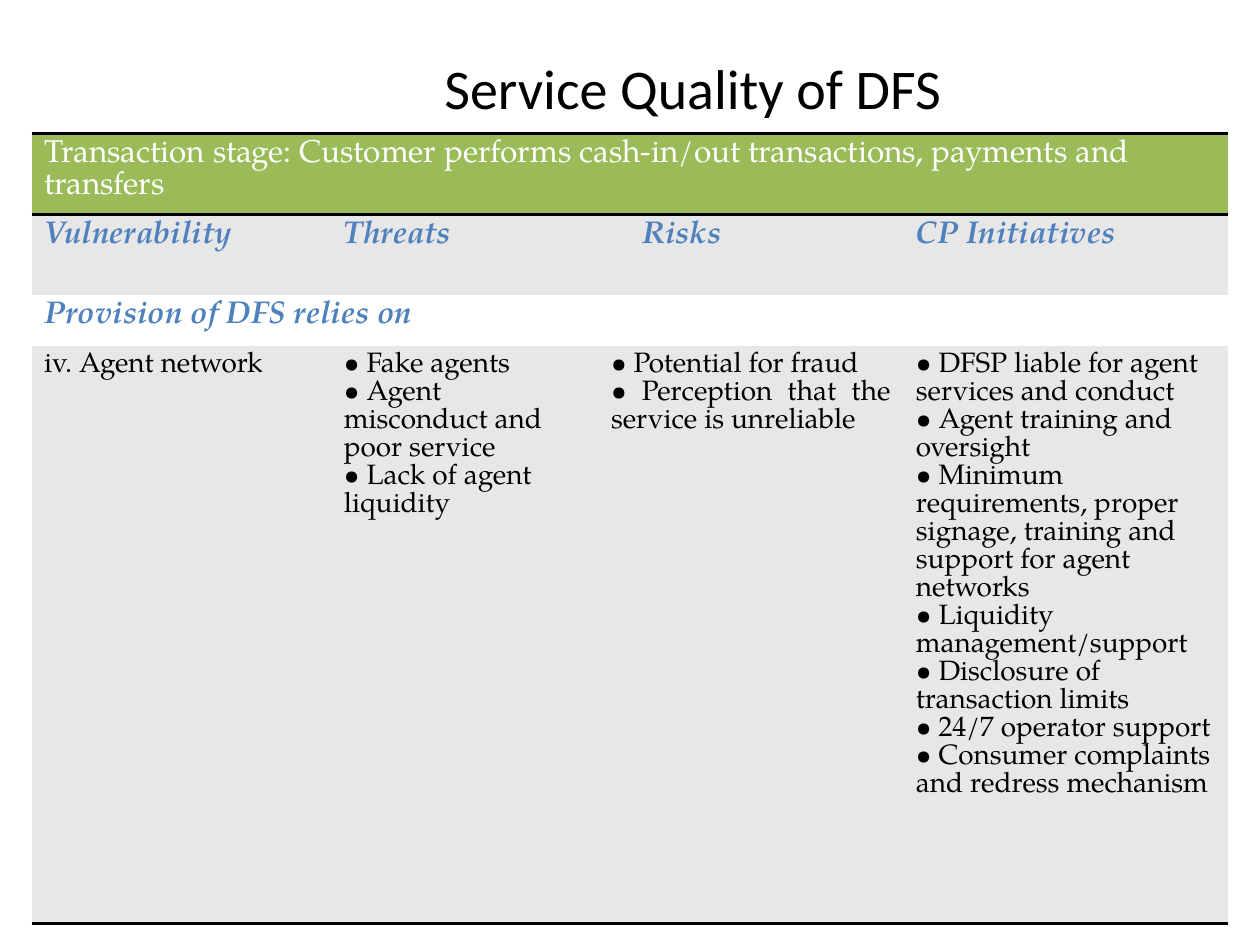
from lxml import etree
from pptx import Presentation
from pptx.dml.color import RGBColor
from pptx.enum.text import MSO_ANCHOR, PP_ALIGN
from pptx.oxml.ns import qn
from pptx.util import Inches, Pt

CENTER, JUSTIFY, LEFT = PP_ALIGN.CENTER, PP_ALIGN.JUSTIFY, PP_ALIGN.LEFT
MIDDLE = MSO_ANCHOR.MIDDLE

BLACK = RGBColor(0x00, 0x00, 0x00)
WHITE = RGBColor(0xFF, 0xFF, 0xFF)
GREEN = RGBColor(0x9B, 0xBB, 0x59)
GREY = RGBColor(0xE7, 0xE7, 0xE7)
BLUE = RGBColor(0x4F, 0x81, 0xBD)

TITLE_FONT = "Calibri"
TABLE_FONT = "TeX Gyre Pagella"
NO_STYLE = "{2D5ABB26-0587-4C30-8999-92F81FD0307C}"

COLUMNS = [2.38, 2.12, 0.25, 2.17, 2.58]
ROWS = [0.64, 0.64, 0.41, 4.58]
ROW_FILLS = [GREEN, GREY, WHITE, GREY]
ROW_BORDERS = [("a:lnT", "a:lnB"), (), (), ("a:lnB",)]

STAGE = "Transaction stage: Customer performs cash-in/out transactions, payments and transfers"
HEADINGS = {0: "Vulnerability", 1: "Threats", 3: "Risks", 4: "CP Initiatives"}
PROVISION = "Provision of DFS relies on"
VULNERABILITY = "iv. Agent network"
THREATS = ["• Fake agents", "• Agent misconduct and poor service", "• Lack of agent liquidity"]
RISKS = ["• Potential for fraud", "• Perception that the service is unreliable"]
INITIATIVES = [
    "• DFSP liable for agent services and conduct",
    "• Agent training and oversight",
    "• Minimum requirements, proper signage, training and support for agent networks",
    "• Liquidity management/support",
    "• Disclosure of transaction limits",
    "• 24/7 operator support",
    "• Consumer complaints and redress mechanism",
]


def add_title(slide, left, top, width, height):
    """Place the slide title, centred in the space right of a wide inset."""
    tf = slide.shapes.add_textbox(left, top, width, height).text_frame
    tf.word_wrap = True
    tf.vertical_anchor = MIDDLE
    tf.margin_left = Inches(1.1)
    p = tf.paragraphs[0]
    p.text = "Service Quality of DFS"
    p.alignment = CENTER
    font = p.runs[0].font
    font.name, font.size, font.color.rgb = TITLE_FONT, Pt(32), BLACK


def write_cell(cell, lines, size, color, align=LEFT, emphasis=False):
    """Write one paragraph per line, set solid in the given style."""
    cell.text_frame.text = "\n".join(lines)
    for p in cell.text_frame.paragraphs:
        p.alignment = align
        p.line_spacing = Pt(size)
        font = p.runs[0].font
        font.name, font.size, font.color.rgb = TABLE_FONT, Pt(size), color
        font.bold = font.italic = emphasis


def add_border(cell, tag):
    """Draw a black two-point line on one side of a cell."""
    ln = etree.SubElement(cell._tc.get_or_add_tcPr(), qn(tag), w=str(Pt(2)))
    fill = etree.SubElement(ln, qn("a:solidFill"))
    etree.SubElement(fill, qn("a:srgbClr"), val=str(BLACK))


def add_risk_table(slide, left, top, width, height):
    """Place the table of vulnerabilities, threats, risks and initiatives."""
    frame = slide.shapes.add_table(len(ROWS), len(COLUMNS), left, top, width, height)
    table = frame.table
    table.first_row = table.horz_banding = False
    table._tbl.tblPr.find(qn("a:tableStyleId")).text = NO_STYLE
    for column, size in zip(table.columns, COLUMNS):
        column.width = Inches(size)
    for row, size, fill, borders in zip(table.rows, ROWS, ROW_FILLS, ROW_BORDERS):
        row.height = Inches(size)
        for cell in row.cells:
            for tag in borders:
                add_border(cell, tag)
            cell.fill.solid()
            cell.fill.fore_color.rgb = fill

    for row, first, last in [(0, 0, 4), (1, 1, 2), (2, 0, 4), (3, 2, 3)]:
        table.cell(row, first).merge(table.cell(row, last))

    write_cell(table.cell(0, 0), [STAGE], 18, WHITE)
    for col, heading in HEADINGS.items():
        write_cell(table.cell(1, col), [heading], 18, BLUE, JUSTIFY, True)
    write_cell(table.cell(2, 0), [PROVISION], 18, BLUE, JUSTIFY, True)
    write_cell(table.cell(3, 0), [VULNERABILITY], 16, BLACK)
    write_cell(table.cell(3, 1), THREATS, 16, BLACK)
    write_cell(table.cell(3, 2), RISKS, 16, BLACK, JUSTIFY)
    write_cell(table.cell(3, 4), INITIATIVES, 16, BLACK)


def main():
    """Build the slide and save it."""
    prs = Presentation()
    prs.slide_width, prs.slide_height = Inches(10), Inches(7.5)
    slide = prs.slides.add_slide(prs.slide_layouts[6])
    add_title(slide, Inches(0.5), Inches(0.3), Inches(9), Inches(0.78))
    add_risk_table(slide, Inches(0.25), Inches(1.06), Inches(sum(COLUMNS)), Inches(sum(ROWS)))
    prs.save("out.pptx")


if __name__ == "__main__":
    main()
